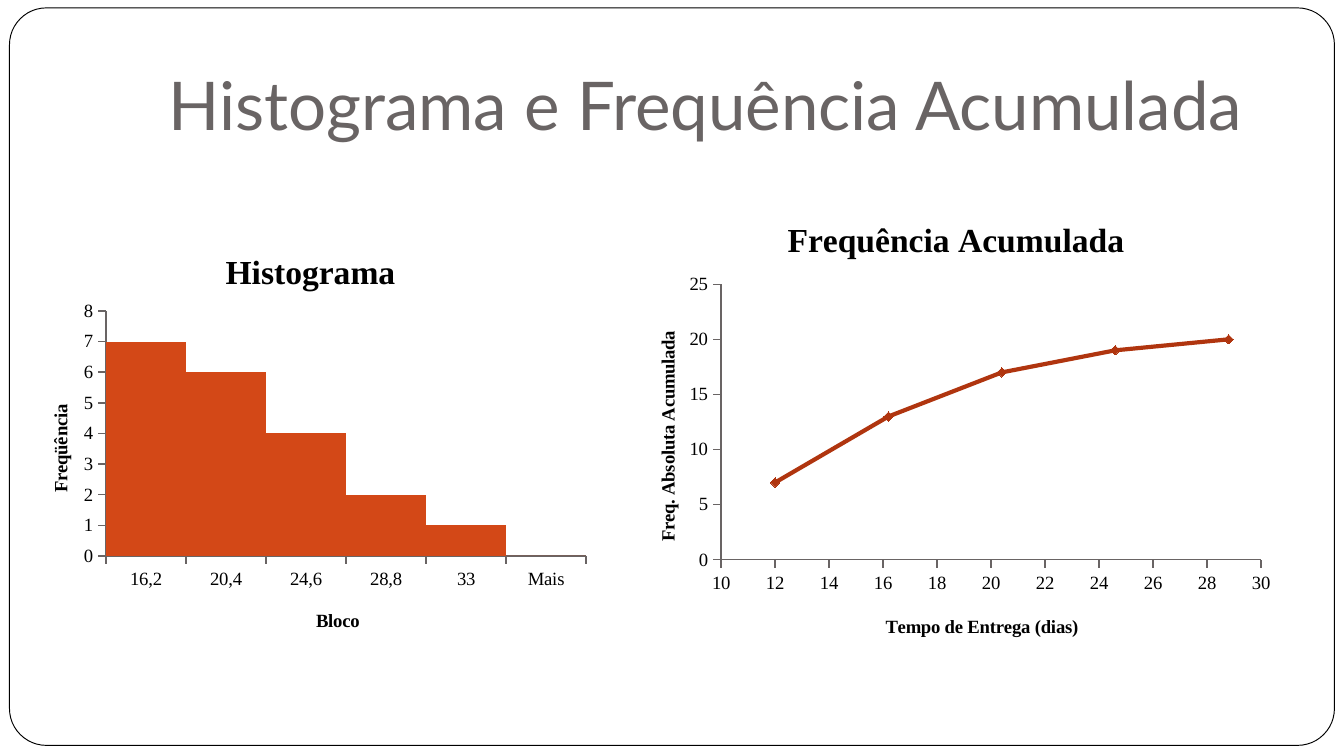
from lxml import etree
from pptx import Presentation
from pptx.chart.data import CategoryChartData, XyChartData
from pptx.dml.color import RGBColor
from pptx.enum.chart import XL_CHART_TYPE, XL_MARKER_STYLE, XL_TICK_MARK
from pptx.enum.shapes import MSO_SHAPE
from pptx.enum.text import MSO_ANCHOR, PP_ALIGN
from pptx.oxml.ns import qn
from pptx.util import Cm, Pt

COLUMNS = XL_CHART_TYPE.COLUMN_CLUSTERED
SCATTER = XL_CHART_TYPE.XY_SCATTER_LINES
DIAMOND = XL_MARKER_STYLE.DIAMOND
OUTSIDE, NO_TICK = XL_TICK_MARK.OUTSIDE, XL_TICK_MARK.NONE
ROUNDED = MSO_SHAPE.ROUNDED_RECTANGLE
BOTTOM, CENTER = MSO_ANCHOR.BOTTOM, PP_ALIGN.CENTER

BLACK, WHITE, GRAY = "000000", "FFFFFF", "696464"
ORANGE, DARK_ORANGE = "D34817", "B0350F"
TITLE_FONT, CHART_FONT = "Lato", "Times New Roman"


def color(hex_text):
    return RGBColor.from_string(hex_text)


def set_attributes(target, values):
    for name, value in values.items():
        setattr(target, name, value)


def format_font(font, name, size, hex_text, bold=False):
    set_attributes(font, {"name": name, "size": Pt(size), "bold": bold})
    font.color.rgb = color(hex_text)


def set_layout(parent, index, **fractions):
    """Place a chart part by fractions (x, y, w, h) of the chart's box."""
    for old_layout in parent.findall(qn("c:layout")):
        parent.remove(old_layout)
    layout = etree.Element(qn("c:layout"))
    manual = etree.SubElement(layout, qn("c:manualLayout"))
    settings = {"xMode": "edge", "yMode": "edge", **fractions}
    if "w" in fractions:
        settings = {"layoutTarget": "inner", **settings}
    for name, value in settings.items():
        etree.SubElement(manual, qn(f"c:{name}")).set("val", str(value))
    parent.insert(index, layout)


def write_title(title, text, size, position):
    title.text_frame.text = text
    run = title.text_frame.paragraphs[0].runs[0]
    format_font(run.font, CHART_FONT, size, BLACK, True)
    x, y = position
    set_layout(title._element, 1, x=x, y=y)


def add_frame(slide, left, top, width, height):
    frame = slide.shapes.add_shape(ROUNDED, left, top, width, height)
    frame.adjustments[0] = 0.05
    frame.shadow.inherit = False
    frame.fill.solid()
    frame.fill.fore_color.rgb = color(WHITE)
    frame.line.color.rgb = color(BLACK)
    frame.line.width = Pt(0.5)


def add_heading(slide, text, left, top, width, height):
    text_frame = slide.shapes.add_textbox(left, top, width, height).text_frame
    set_attributes(text_frame, {
        "word_wrap": True, "vertical_anchor": BOTTOM, "margin_bottom": Cm(0.25)})
    paragraph = text_frame.paragraphs[0]
    paragraph.text = text
    paragraph.alignment = CENTER
    format_font(paragraph.runs[0].font, TITLE_FONT, 36, GRAY)


def add_chart(slide, box, kind, data, title, axis_titles, plot, scales):
    """Titles are (text, position) pairs; scales hold each axis's limits."""
    chart = slide.shapes.add_chart(kind, *box, data).chart
    chart.has_legend = False
    format_font(chart.font, CHART_FONT, 10, BLACK)
    write_title(chart.chart_title, title[0], 18, title[1])
    x, y, w, h = plot
    set_layout(chart._chartSpace.chart.plotArea, 0, x=x, y=y, w=w, h=h)
    axes = (chart.category_axis, chart.value_axis)
    for axis, (text, position), scale in zip(axes, axis_titles, scales):
        set_attributes(axis, {
            "has_major_gridlines": False, "has_minor_gridlines": False,
            "major_tick_mark": OUTSIDE, "minor_tick_mark": NO_TICK, **scale})
        axis.format.line.color.rgb = color(GRAY)
        axis.format.line.width = Pt(0.75)
        write_title(axis.axis_title, text, 10, position)
    return chart


def add_histogram(slide, *box):
    data = CategoryChartData()
    data.categories = ["16,2", "20,4", "24,6", "28,8", "33", "Mais"]
    data.add_series("Frequência", (7, 6, 4, 2, 1, 0))
    chart = add_chart(
        slide, box, COLUMNS, data, ("Histograma", (0.35, 0.06)),
        [("Bloco", (0.51, 0.89)), ("Freqüência", (0.05, 0.42))],
        (0.155, 0.212, 0.825, 0.565),
        [{}, {"minimum_scale": 0, "maximum_scale": 8, "major_unit": 1}])
    plot = chart.plots[0]
    set_attributes(plot, {"gap_width": 0, "vary_by_categories": False})
    fill = plot.series[0].format.fill
    fill.solid()
    fill.fore_color.rgb = color(ORANGE)


def add_cumulative_chart(slide, *box):
    data = XyChartData()
    series_data = data.add_series("Frequência acumulada")
    for days, total in zip((12, 16.2, 20.4, 24.6, 28.8), (7, 13, 17, 19, 20)):
        series_data.add_data_point(days, total)
    chart = add_chart(
        slide, box, SCATTER, data, ("Frequência Acumulada", (0.27, 0.05)),
        [("Tempo de Entrega (dias)", (0.41, 0.85)),
         ("Freq. Absoluta Acumulada", (0.09, 0.28))],
        (0.186, 0.193, 0.751, 0.554),
        [{"minimum_scale": 10, "maximum_scale": 30, "major_unit": 2},
         {"minimum_scale": 0, "maximum_scale": 25, "major_unit": 5}])
    chart.plots[0].vary_by_categories = False
    series = chart.plots[0].series[0]
    series.smooth = False
    series.format.line.color.rgb = color(DARK_ORANGE)
    series.format.line.width = Pt(2.25)
    marker = series.marker
    set_attributes(marker, {"style": DIAMOND, "size": 5})
    marker.format.fill.solid()
    marker.format.fill.fore_color.rgb = color(DARK_ORANGE)
    marker.format.line.color.rgb = color(DARK_ORANGE)


def main():
    presentation = Presentation()
    presentation.slide_width, presentation.slide_height = Cm(25.4), Cm(14.29)
    slide = presentation.slides.add_slide(presentation.slide_layouts[6])
    add_frame(slide, Cm(0.18), Cm(0.15), Cm(25.04), Cm(13.94))
    add_heading(slide, "Histograma e Frequência Acumulada",
                Cm(2.54), Cm(0.58), Cm(21.59), Cm(2.39))
    add_histogram(slide, Cm(0.3), Cm(4.14), Cm(11), Cm(8.2))
    add_cumulative_chart(slide, Cm(11.1), Cm(3.56), Cm(13.59), Cm(9.4))
    presentation.save("out.pptx")


if __name__ == "__main__":
    main()
